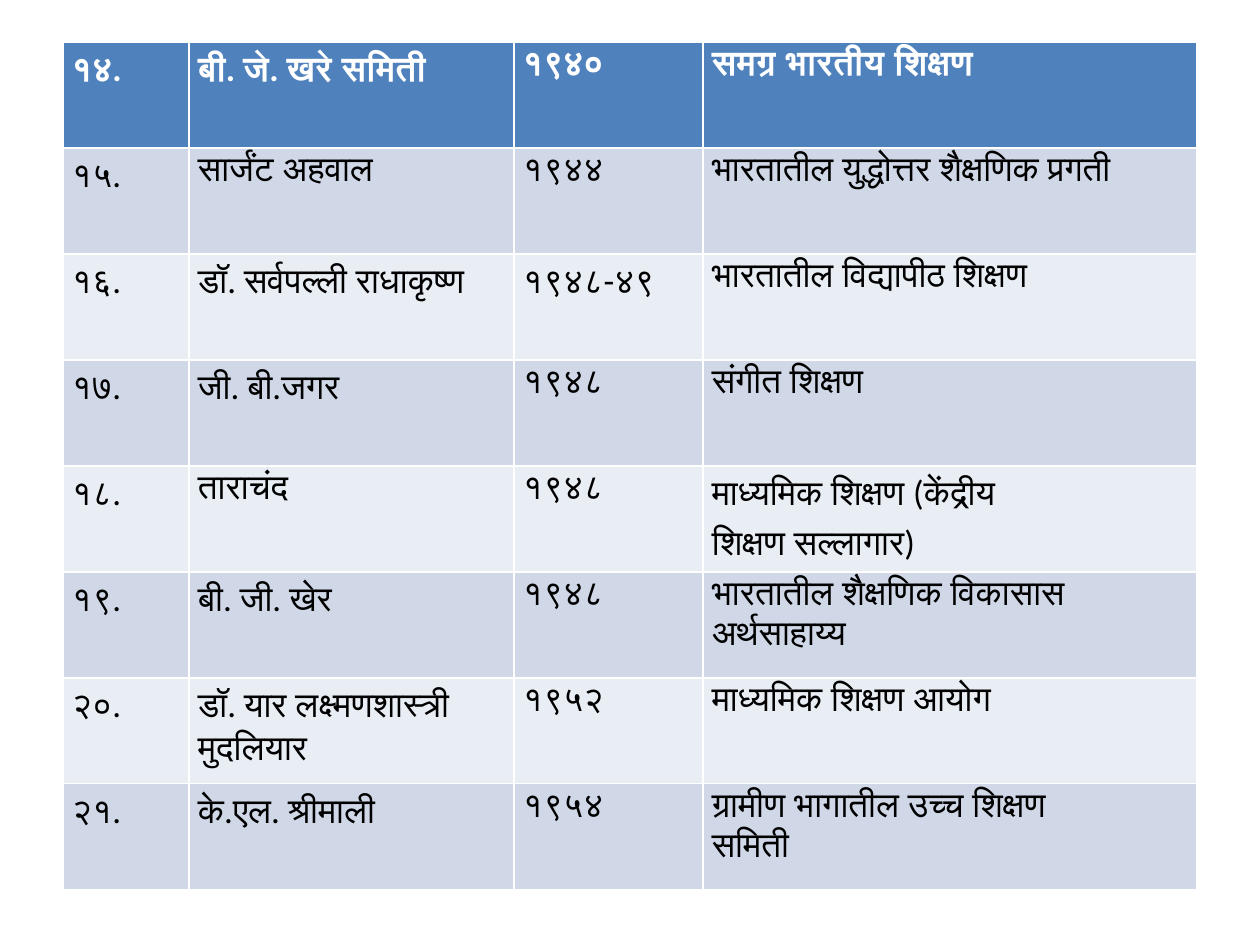
"""Build a slide with a table of education committees, years and subjects."""
import pptx
import pptx.util
import pptx.dml.color

PX = 914400 // 126
INK = {"head": "4F81BD", "odd": "D0D8E8", "even": "E9EDF4",
       "white": "FFFFFF", "black": "000000"}
TINT = {name: pptx.dml.color.RGBColor.from_string(code) for name, code in INK.items()}
COLS = [126, 325, 189, 494]
HIGH = 106
ROWS = [
    ("१४.", "बी. जे. खरे समिती", "१९४०", "समग्र भारतीय शिक्षण"),
    ("१५.", "सार्जंट अहवाल", "१९४४", "भारतातील युद्धोत्तर शैक्षणिक प्रगती"),
    ("१६.", "डॉ. सर्वपल्ली राधाकृष्ण", "१९४८-४९", "भारतातील विद्यापीठ शिक्षण"),
    ("१७.", "जी. बी.जगर", "१९४८", "संगीत शिक्षण"),
    ("१८.", "ताराचंद", "१९४८", "माध्यमिक शिक्षण (केंद्रीय\nशिक्षण सल्लागार)"),
    ("१९.", "बी. जी. खेर", "१९४८", "भारतातील शैक्षणिक विकासास\nअर्थसाहाय्य"),
    ("२०.", "डॉ. यार लक्ष्मणशास्त्री मुदलियार", "१९५२", "माध्यमिक शिक्षण आयोग"),
    ("२१.", "के.एल. श्रीमाली", "१९५४", "ग्रामीण भागातील उच्च शिक्षण\nसमिती"),
]

deck = pptx.Presentation()
deck.slide_width = 1260 * PX
deck.slide_height = 945 * PX
slide = deck.slides.add_slide(deck.slide_layouts[6])

frame = slide.shapes.add_table(len(ROWS), len(COLS), 63 * PX, 42 * PX,
                               sum(COLS) * PX, len(ROWS) * HIGH * PX)
table = frame.table
for col, wide in zip(table.columns, COLS):
    col.width = wide * PX

for y, words in enumerate(ROWS):
    table.rows[y].height = HIGH * PX
    fill = "head" if y == 0 else "odd" if y % 2 else "even"
    for x, text in enumerate(words):
        cell = table.cell(y, x)
        cell.fill.solid()
        cell.fill.fore_color.rgb = TINT[fill]
        cell.margin_left = cell.margin_right = 9 * PX
        cell.margin_top = cell.margin_bottom = 0
        for n, line in enumerate(text.split("\n")):
            body = cell.text_frame
            para = body.add_paragraph() if n else body.paragraphs[0]
            para.line_spacing = 1.15
            para.space_before = para.space_after = pptx.util.Pt(0.1)
            run = para.add_run()
            run.text = line
            run.font.name = "Calibri"
            run.font.size = pptx.util.Pt(20)
            run.font.bold = y == 0
            run.font.color.rgb = TINT["black" if y else "white"]

deck.save("out.pptx")
